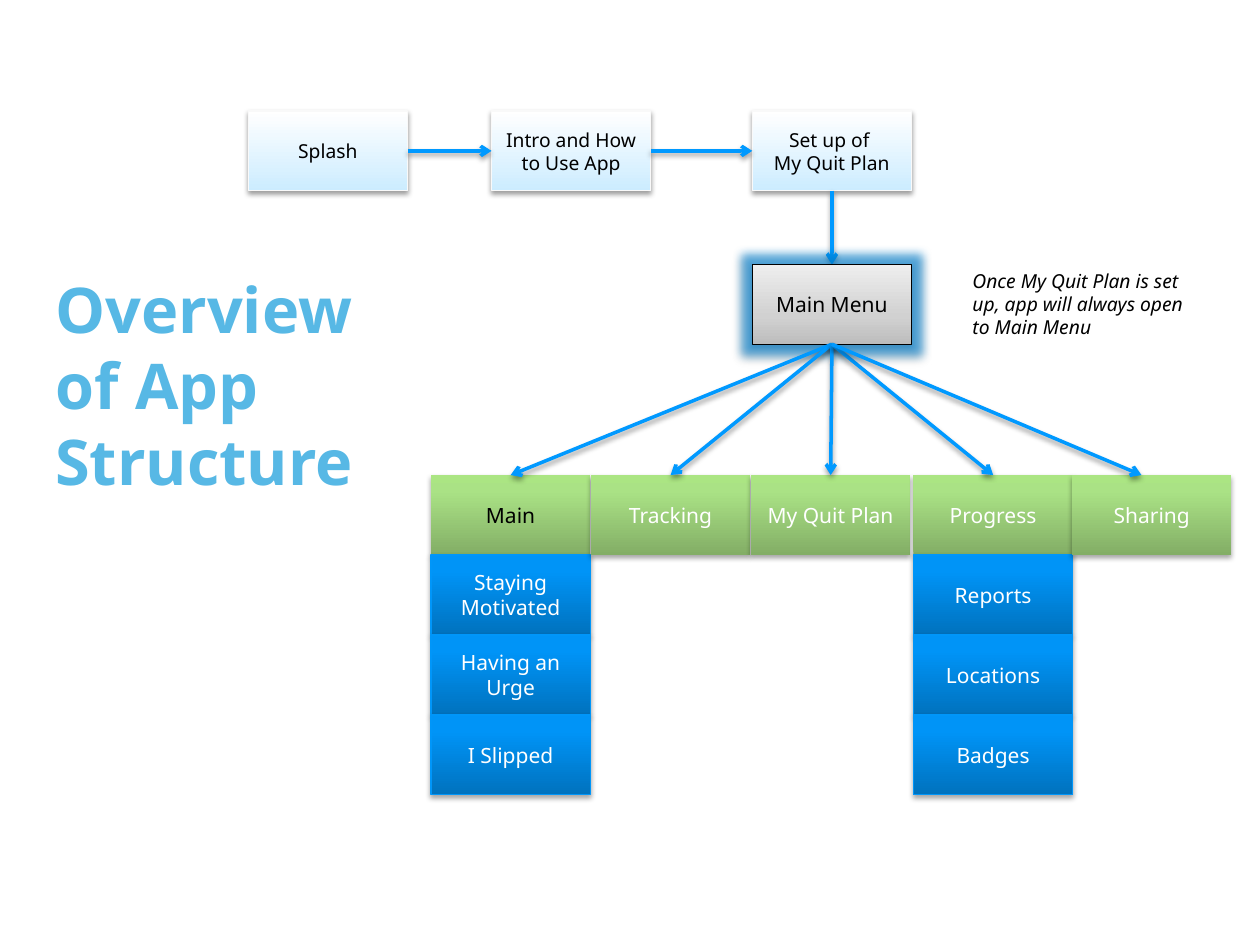
"""Build the app structure overview slide."""
import dataclasses
import typing

import lxml.etree
import pptx
import pptx.dml.color
import pptx.enum.shapes
import pptx.enum.text
import pptx.oxml.ns
import pptx.util

Pt = pptx.util.Pt
Point = tuple[float, float]


@dataclasses.dataclass(frozen=True)
class Style:
    stops: tuple[tuple[int, str], ...]
    line: str | None
    text: str
    size: float
    shadow_alpha: int = 35
    glow: bool = False


@dataclasses.dataclass(frozen=True)
class Theme:
    font: str = "Noto Sans"
    title: str = "57B8E5"
    black: str = "000000"
    arrow: str = "0099FF"
    glow: str = "0088DD"
    title_size: float = 36
    note_size: float = 11
    step: Style = Style(((0, "CCECFF"), (100, "FFFFFF")), "F9F9F9", "000000", 11, 38)
    menu: Style = Style(((0, "BDBDBD"), (35, "D1D1D1"), (100, "EEEEEE")),
                        "000000", "000000", 12, 38, True)
    tab: Style = Style(((0, "83AE66"), (80, "AAE285"), (100, "ABE583")), None, "FFFFFF", 12)
    item: Style = Style(((0, "0072BE"), (80, "0094F7"), (100, "0095F8")),
                        "0096F9", "FFFFFF", 12)


@dataclasses.dataclass(frozen=True)
class Column:
    left: float
    label: str
    items: tuple[str, ...] = ()


THEME = Theme()
BOX_WIDTH, BOX_HEIGHT = 91, 45.5
STEP_TOP, MENU_TOP, TAB_TOP, ROW_PITCH = 63.5, 151.2, 271.5, 45.7
MENU_LEFT = 429.9
STEPS = ((141.9, "Splash"), (280.9, "Intro and How to Use App"),
         (MENU_LEFT, "Set up of \nMy Quit Plan"))
COLUMNS = (
    Column(246.3, "Main", ("Staying Motivated", "Having an Urge", "I Slipped")),
    Column(337.7, "Tracking"),
    Column(429.2, "My Quit Plan"),
    Column(522, "Progress", ("Reports", "Locations", "Badges")),
    Column(612.7, "Sharing"),
)
SHARING_ARROW_X = 652.3


def rgb(value: str) -> pptx.dml.color.RGBColor:
    """Turn a hex value into a colour."""
    return pptx.dml.color.RGBColor.from_string(value)


def add_child(parent: typing.Any, tag: str, **values: typing.Any) -> typing.Any:
    """Append a DrawingML element with the given attributes."""
    child = lxml.etree.SubElement(parent, pptx.oxml.ns.qn(tag))
    for name, value in values.items():
        child.set(name, str(value))
    return child


def add_effects(shape: typing.Any, shadow_alpha: int, glow: bool = False) -> None:
    """Give a shape its soft shadow and, if asked, a glow."""
    properties = shape._element.spPr
    for old in properties.findall(pptx.oxml.ns.qn("a:effectLst")):
        properties.remove(old)
    effects = add_child(properties, "a:effectLst")
    if glow:
        halo = add_child(effects, "a:glow", rad=int(Pt(11)))
        color = add_child(halo, "a:srgbClr", val=THEME.glow)
        add_child(color, "a:alpha", val=60000)
    shadow = add_child(effects, "a:outerShdw", blurRad=int(Pt(3.1)), dist=int(Pt(1.7)),
                       dir=5400000, rotWithShape=0)
    color = add_child(shadow, "a:srgbClr", val=THEME.black)
    add_child(color, "a:alpha", val=shadow_alpha * 1000)


def write_text(shape: typing.Any, text: str, color: str, centred: bool = False,
               **formats: typing.Any) -> None:
    """Write one paragraph for each line of text."""
    frame = shape.text_frame
    frame.word_wrap = True
    frame.text = text
    formats = {"name": THEME.font, **formats}
    for para in frame.paragraphs:
        if centred:
            para.alignment = pptx.enum.text.PP_ALIGN.CENTER
        for span in para.runs:
            span.font.color.rgb = rgb(color)
            for name, value in formats.items():
                setattr(span.font, name, value)


def add_box(page: typing.Any, left: float, top: float, text: str, style: Style) -> None:
    """Draw one screen of the app as a shaded box."""
    box = page.shapes.add_shape(pptx.enum.shapes.MSO_SHAPE.FLOWCHART_PROCESS,
                                Pt(left), Pt(top), Pt(BOX_WIDTH), Pt(BOX_HEIGHT))
    box.shadow.inherit = False
    box.fill.gradient()
    box.fill.gradient_angle = 90
    stops = box._element.spPr.find(".//" + pptx.oxml.ns.qn("a:gsLst"))
    for old in list(stops):
        stops.remove(old)
    for position, color in style.stops:
        stop = add_child(stops, "a:gs", pos=position * 1000)
        add_child(stop, "a:srgbClr", val=color)
    if style.line:
        box.line.color.rgb = rgb(style.line)
        box.line.width = Pt(0.75)
    else:
        box.line.fill.background()
    add_effects(box, style.shadow_alpha, style.glow)
    box.text_frame.vertical_anchor = pptx.enum.text.MSO_ANCHOR.MIDDLE
    write_text(box, text, style.text, centred=True, size=Pt(style.size))


def add_arrow(page: typing.Any, start: Point, end: Point) -> None:
    """Draw an arrow between two points."""
    arrow = page.shapes.add_connector(pptx.enum.shapes.MSO_CONNECTOR.STRAIGHT,
                                      *map(Pt, start + end))
    arrow.line.color.rgb = rgb(THEME.arrow)
    arrow.line.width = Pt(2)
    add_child(arrow.line._get_or_add_ln(), "a:tailEnd", type="arrow")
    add_effects(arrow, 38)


def add_label(page: typing.Any, place: tuple[float, float, float, float], text: str,
              color: str, **formats: typing.Any) -> None:
    """Add a free-standing text box."""
    write_text(page.shapes.add_textbox(*map(Pt, place)), text, color, **formats)


def main() -> None:
    """Build and save the deck."""
    deck = pptx.Presentation()
    deck.slide_width, deck.slide_height = Pt(720), Pt(540)
    page = deck.slides.add_slide(deck.slide_layouts[6])
    add_label(page, (24.5, 151.2, 190, 138.2), "Overview of App Structure",
              THEME.title, size=Pt(THEME.title_size), bold=True)
    add_label(page, (548.6, 150.5, 142.6, 47.5),
              "Once My Quit Plan is set up, app will always open to Main Menu",
              THEME.black, size=Pt(THEME.note_size), italic=True)

    for left, text in STEPS:
        add_box(page, left, STEP_TOP, text, THEME.step)
    middle = STEP_TOP + BOX_HEIGHT / 2
    for (left, _), (following, _) in zip(STEPS, STEPS[1:]):
        add_arrow(page, (left + BOX_WIDTH, middle), (following, middle))
    menu_x = MENU_LEFT + BOX_WIDTH / 2
    add_arrow(page, (menu_x, STEP_TOP + BOX_HEIGHT), (menu_x, MENU_TOP))
    add_box(page, MENU_LEFT, MENU_TOP, "Main Menu", THEME.menu)

    current_tab = dataclasses.replace(THEME.tab, text=THEME.black)
    for column in COLUMNS:
        style = current_tab if column is COLUMNS[0] else THEME.tab
        add_box(page, column.left, TAB_TOP, column.label, style)
        for row, text in enumerate(column.items, start=1):
            add_box(page, column.left, TAB_TOP + row * ROW_PITCH, text, THEME.item)
    targets = [column.left + BOX_WIDTH / 2 for column in COLUMNS[:-1]] + [SHARING_ARROW_X]
    for target in targets:
        add_arrow(page, (menu_x, MENU_TOP + BOX_HEIGHT), (target, TAB_TOP))
    deck.save("out.pptx")


if __name__ == "__main__":
    main()
